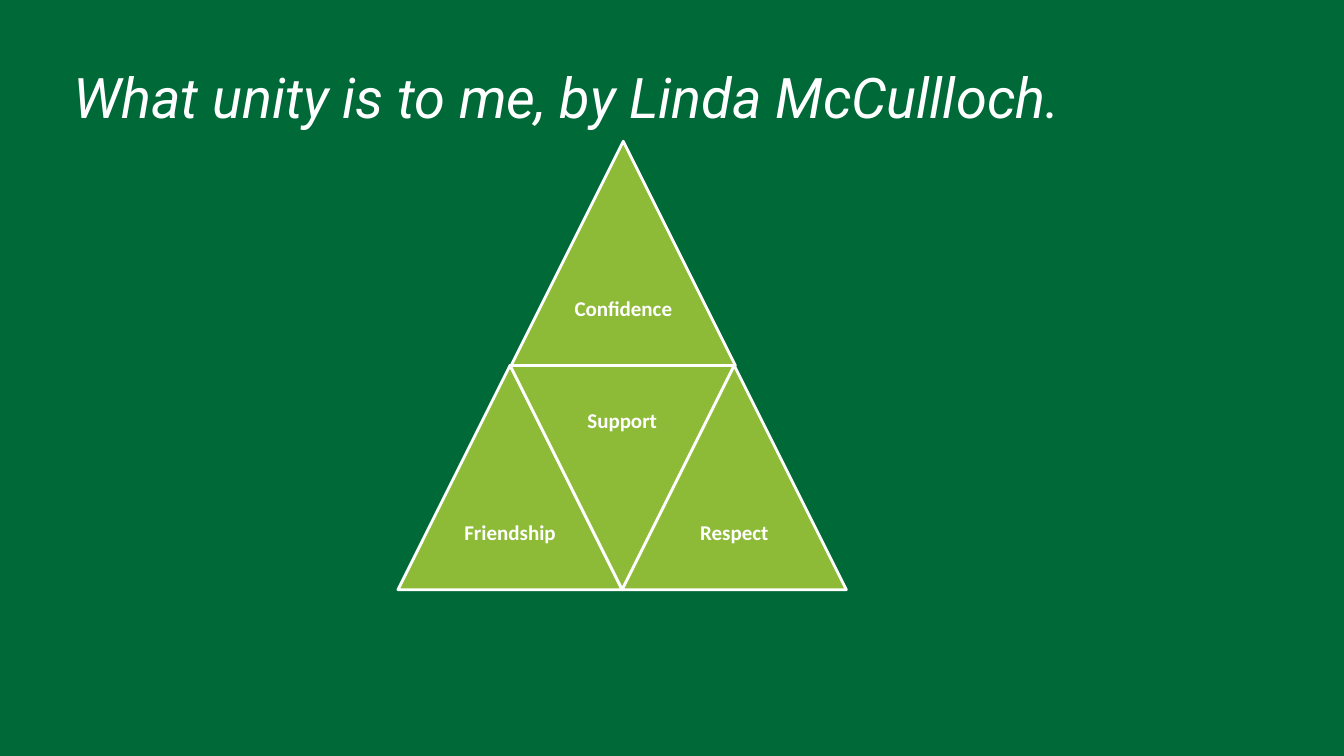
from pptx import Presentation
from pptx.dml.color import RGBColor
from pptx.enum.shapes import MSO_SHAPE
from pptx.enum.text import MSO_ANCHOR, PP_ALIGN
from pptx.util import Cm, Pt

TRIANGLE = MSO_SHAPE.ISOSCELES_TRIANGLE
TOP, MIDDLE = MSO_ANCHOR.TOP, MSO_ANCHOR.MIDDLE
CENTER = PP_ALIGN.CENTER

GREEN, LIME, WHITE = "006938", "8DBB37", "FFFFFF"

# Word, column and row in half and whole triangles, points down
VALUES = [
    ("Confidence", 1.01, 0, False),
    ("Friendship", 0, 1, False),
    ("Support", 1, 1, True),
    ("Respect", 2, 1, False),
]


def color(value):
    return RGBColor.from_string(value)


def add_title(page, left, top, width, height):
    box = page.shapes.add_textbox(Cm(left), Cm(top), Cm(width), Cm(height))
    frame = box.text_frame
    frame.word_wrap = True
    frame.vertical_anchor = TOP
    frame.text = "What unity is to me, by Linda McCullloch."
    para = frame.paragraphs[0]
    para.line_spacing = Pt(40)
    font = para.runs[0].font
    font.name, font.size, font.italic = "Roboto", Pt(40), True
    font.color.rgb = color(WHITE)


def add_label(page, word, left, top, size):
    box = page.shapes.add_textbox(Cm(left), Cm(top), Cm(size), Cm(size))
    frame = box.text_frame
    frame.word_wrap = True
    frame.vertical_anchor = MIDDLE
    frame.margin_left = frame.margin_right = Cm(0.15)
    frame.margin_top = frame.margin_bottom = Cm(0.15)
    frame.text = word
    para = frame.paragraphs[0]
    para.alignment = CENTER
    para.line_spacing = 0.9
    font = para.runs[0].font
    font.name, font.size, font.bold = "Calibri", Pt(15), True
    font.color.rgb = color(WHITE)


def add_pyramid(page, left, top, size):
    """Fill a square box with four triangles, each half as wide as the box."""
    side = size / 2
    half = side / 2
    for word, column, row, points_down in VALUES:
        x = left + column * half
        y = top + row * side
        triangle = page.shapes.add_shape(TRIANGLE, Cm(x), Cm(y), Cm(side), Cm(side))
        triangle.shadow.inherit = False
        triangle.rotation = 180 if points_down else 0
        triangle.fill.solid()
        triangle.fill.fore_color.rgb = color(LIME)
        triangle.line.color.rgb = color(WHITE)
        triangle.line.width = Pt(2)
        label_top = y if points_down else y + half
        add_label(page, word, x + half / 2, label_top, half)


def main():
    deck = Presentation()
    deck.slide_width, deck.slide_height = Cm(33.87), Cm(19.05)
    page = deck.slides.add_slide(deck.slide_layouts[6])
    page.background.fill.solid()
    page.background.fill.fore_color.rgb = color(GREEN)
    add_title(page, 1.6, 1.73, 30.66, 2.87)
    add_pyramid(page, 10.03, 3.56, 11.3)
    deck.save("out.pptx")


if __name__ == "__main__":
    main()
